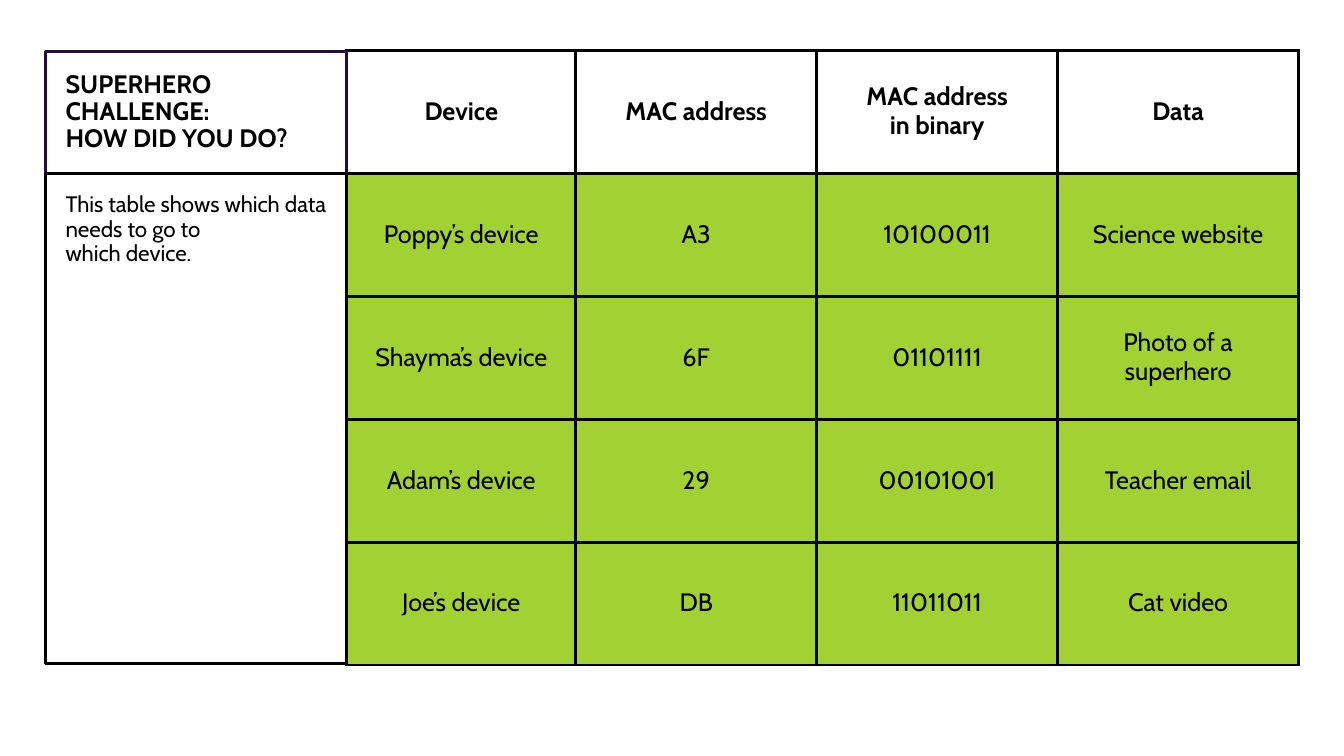
from dataclasses import dataclass

from lxml import etree
from pptx import Presentation
from pptx import util as u
from pptx.dml.color import RGBColor
from pptx.enum import text
from pptx.oxml import ns

PX = 9144
INSET = 20
PANEL_LEFT, PANEL_WIDTH = 45, 299
TABLE_LEFT, TABLE_TOP = 344, 50
ROW_HEIGHT = 122
COLUMN_WIDTHS = (227, 239, 239, 239)

ROWS = (
    ("Device", "MAC address", "MAC address\vin binary", "Data"),
    ("Poppy’s device", "A3", "10100011", "Science website"),
    ("Shayma’s device", "6F", "01101111", "Photo of a superhero"),
    ("Adam’s device", "29", "00101001", "Teacher email"),
    ("Joe’s device", "DB", "11011011", "Cat video"),
)


@dataclass(frozen=True)
class Theme:
    """Colours, font and type sizes of the slide."""

    ink: str = "000000"
    paper: str = "FFFFFF"
    green: str = "A2D134"
    purple: str = "240C40"
    font: str = "Cabin"
    large: int = 18
    small: int = 16
    line: float = 2.25


THEME = Theme()


def px(length):
    """Turn a length in px into EMU."""
    return u.Emu(length * PX)


def apply(target, **values):
    """Set each named attribute on the target."""
    for name, value in values.items():
        setattr(target, name, value)


def paint(fill, colour):
    """Fill solidly with a colour."""
    fill.solid()
    fill.fore_color.rgb = RGBColor.from_string(colour)


def margins():
    """Give the four equal insets shared by panels and cells."""
    return {f"margin_{side}": px(INSET) for side in ("left", "top", "right", "bottom")}


def write(para, words, size, bold, **layout):
    """Write words into a paragraph with its type and layout."""
    para.text = words
    apply(para, space_before=u.Pt(0), **layout)
    for span in para.runs:
        apply(span.font, name=THEME.font, size=u.Pt(size), bold=bold)
        span.font.color.rgb = RGBColor.from_string(THEME.ink)


def fill_panel(box, top, height, words, size, bold, outline):
    """Turn a placeholder into an outlined text panel."""
    apply(box, left=px(PANEL_LEFT), top=px(top), width=px(PANEL_WIDTH), height=px(height))
    paint(box.fill, THEME.paper)
    box.line.width = u.Pt(THEME.line)
    box.line.color.rgb = RGBColor.from_string(outline)
    apply(box.text_frame, word_wrap=True, auto_size=text.MSO_AUTO_SIZE.NONE,
          vertical_anchor=text.MSO_ANCHOR.TOP, **margins())
    para = box.text_frame.paragraphs[0]
    properties = para._p.get_or_add_pPr()
    properties.set("marL", "0")
    properties.set("indent", "0")
    etree.SubElement(properties, ns.qn("a:buNone"))
    write(para, words, size, bold, alignment=text.PP_ALIGN.LEFT, line_spacing=0.9)


def add_borders(cell):
    """Draw a line along every side of a cell."""
    properties = cell._tc.get_or_add_tcPr()
    for side in ("lnL", "lnR", "lnT", "lnB"):
        border = etree.SubElement(properties, ns.qn(f"a:{side}"), w=str(u.Pt(THEME.line)))
        solid = etree.SubElement(border, ns.qn("a:solidFill"))
        etree.SubElement(solid, ns.qn("a:srgbClr"), val=THEME.ink)


def format_cell(cell, words, is_header):
    """Write and colour one cell."""
    apply(cell, vertical_anchor=text.MSO_ANCHOR.MIDDLE, **margins())
    add_borders(cell)
    if is_header:
        cell.fill.background()
    else:
        paint(cell.fill, THEME.green)
    write(cell.text_frame.paragraphs[0], words, THEME.large, is_header,
          alignment=text.PP_ALIGN.CENTER, line_spacing=u.Pt(21))


def add_device_table(page):
    """Add the table of devices behind the panels."""
    frame = page.shapes.add_table(
        len(ROWS), len(COLUMN_WIDTHS), px(TABLE_LEFT), px(TABLE_TOP),
        px(sum(COLUMN_WIDTHS)), px(ROW_HEIGHT * len(ROWS)))
    page.shapes.title.element.addprevious(frame.element)
    table = frame.table
    apply(table, first_row=False, horz_banding=False)
    for column, width in zip(table.columns, COLUMN_WIDTHS):
        column.width = px(width)
    for index, (row, entries) in enumerate(zip(table.rows, ROWS)):
        row.height = px(ROW_HEIGHT)
        for cell, words in zip(row.cells, entries):
            format_cell(cell, words, is_header=index == 0)


def main():
    """Build and save the slide."""
    deck = Presentation()
    apply(deck, slide_width=px(1333), slide_height=px(750))
    page = deck.slides.add_slide(deck.slide_layouts[1])
    paint(page.background.fill, THEME.paper)
    add_device_table(page)
    fill_panel(page.shapes.title, 51, ROW_HEIGHT,
               "SUPERHERO CHALLENGE:\vHOW DID YOU DO?", THEME.large, True, THEME.purple)
    fill_panel(page.placeholders[1], 172, 486,
               "This table shows which data needs to go to\vwhich device.",
               THEME.small, False, THEME.ink)
    deck.save("out.pptx")


if __name__ == "__main__":
    main()
